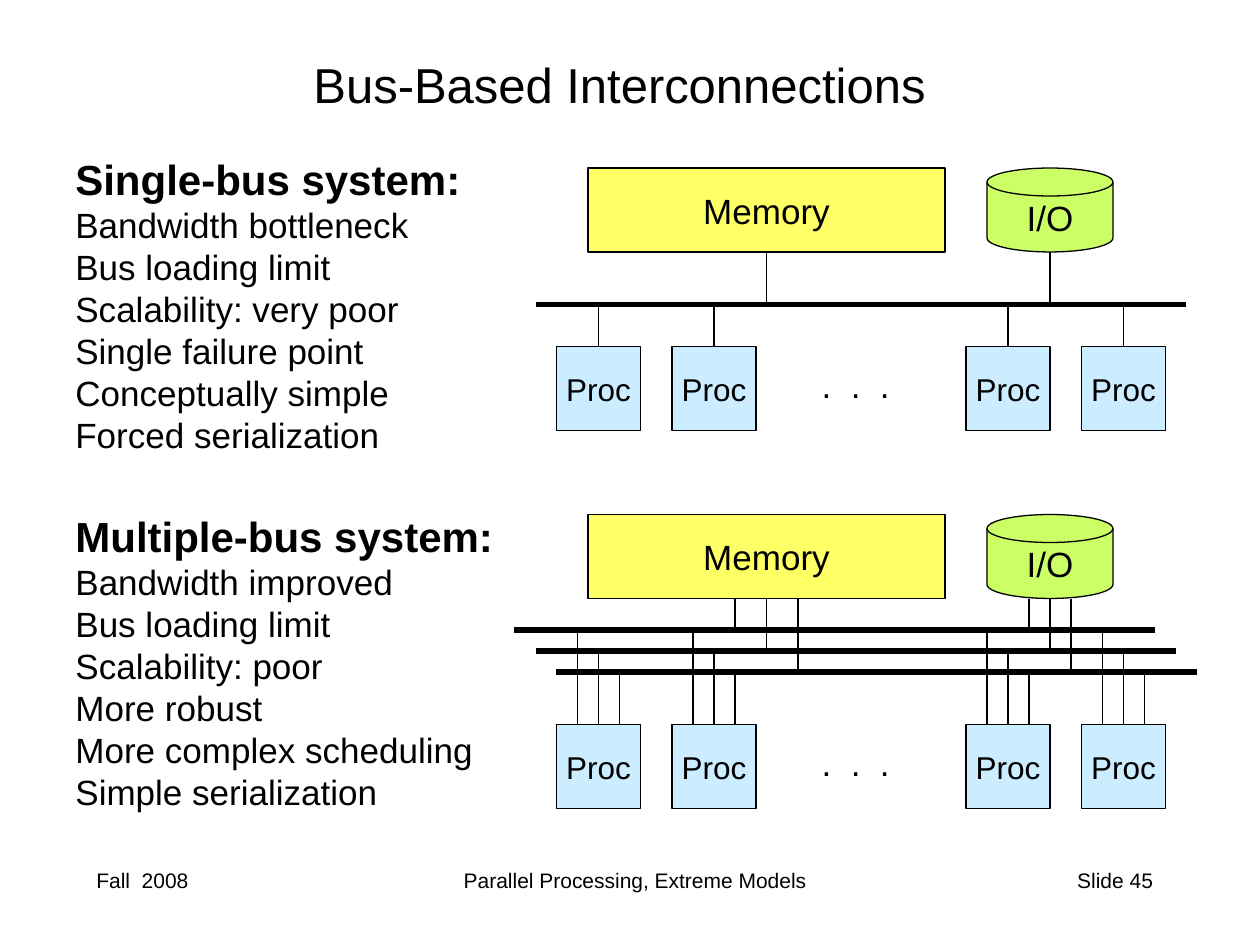
from dataclasses import dataclass

from lxml import etree
from pptx import Presentation
from pptx.dml.color import RGBColor
from pptx.enum import shapes, text
from pptx.oxml.ns import qn
from pptx.util import Pt

LEFT, MID, RIGHT = (text.PP_ALIGN.LEFT, text.PP_ALIGN.CENTER,
                    text.PP_ALIGN.RIGHT)
TOP, BOTTOM = 0, 2


@dataclass(frozen=True)
class Theme:
    font: str = "Arial"
    ink: str = "000000"
    memory: str = "FFFF66"
    disk: str = "CCFF66"
    proc: str = "CCECFF"
    title: int = 28
    head: int = 24
    body: int = 20
    small: int = 18
    foot: int = 12
    thin: float = 0.75
    thick: float = 3


def color(code):
    return RGBColor.from_string(code)


class Page:
    def __init__(self, slide, theme):
        self.slide, self.theme = slide, theme

    def style(self, para, size, align=LEFT, bold=False):
        para.alignment = align
        font = para.font
        font.name, font.size, font.bold = self.theme.font, Pt(size), bold
        font.color.rgb = color(self.theme.ink)

    def label(self, words, x, y, w, h, size, align=LEFT, wrap=True):
        box = self.slide.shapes.add_textbox(Pt(x), Pt(y), Pt(w), Pt(h))
        frame = box.text_frame
        frame.word_wrap = wrap
        frame.text = words
        for para in frame.paragraphs:
            self.style(para, size, align)
        return frame

    def notes(self, head, lines, y, w):
        """Add a bold heading with plain lines under it."""
        frame = self.label("\n".join([head, *lines]), 36, y, w, 180,
                           self.theme.body, wrap=False)
        self.style(frame.paragraphs[0], self.theme.head, bold=True)

    def block(self, kind, words, x, y, w, h, fill, size):
        item = self.slide.shapes.add_shape(kind, Pt(x), Pt(y), Pt(w), Pt(h))
        item.shadow.inherit = False
        item.fill.solid()
        item.fill.fore_color.rgb = color(fill)
        item.line.color.rgb = color(self.theme.ink)
        item.line.width = Pt(self.theme.thin)
        frame = item.text_frame
        frame.word_wrap = False
        frame.vertical_anchor = text.MSO_ANCHOR.MIDDLE
        frame.text = words
        self.style(frame.paragraphs[0], size, MID)
        return item

    def line(self, x1, y1, x2, y2, width):
        item = self.slide.shapes.add_connector(
            shapes.MSO_CONNECTOR.STRAIGHT, Pt(x1), Pt(y1), Pt(x2), Pt(y2))
        item.line.color.rgb = color(self.theme.ink)
        item.line.width = Pt(width)
        etree.SubElement(item._element.spPr, qn("a:effectLst"))
        return item

    def taps(self, item, side, buses, gap):
        """Drop one line from a block to each bus, spread about its middle."""
        mid = (item.left + item.width / 2) / Pt(1)
        y = (item.top + (item.height if side == BOTTOM else 0)) / Pt(1)
        for i, bus in enumerate(buses):
            shift = (i - (len(buses) - 1) / 2) * gap
            tap = self.line(mid + shift, y, mid + shift, bus,
                            self.theme.thin)
            if not shift and item.auto_shape_type == shapes.MSO_SHAPE.RECTANGLE:
                tap.begin_connect(item, side)

    def system(self, top, row, buses, start, length):
        """Draw memory and disk above the buses, processors below."""
        look, kinds = self.theme, shapes.MSO_SHAPE
        memory = self.block(kinds.RECTANGLE, "Memory", 336, top, 204, 48,
                            look.memory, look.body)
        disk = self.block(kinds.FLOWCHART_MAGNETIC_DISK, "I/O", 564, top,
                          72, 48, look.disk, look.body)
        self.taps(memory, BOTTOM, buses, 18)
        self.taps(disk, BOTTOM, buses, 12)
        for x in (318, 384, 552, 618):
            proc = self.block(kinds.RECTANGLE, "Proc", x, row, 48, 48,
                              look.proc, look.small)
            self.taps(proc, TOP, buses, 12)
        for i, bus in enumerate(buses):
            x = start + 12 * i
            self.line(x, bus, x + length, bus, look.thick)
        self.label(".  .  .", 459, row + 6, 60, 31, look.body, MID)


def main():
    deck = Presentation()
    deck.slide_width, deck.slide_height = Pt(720), Pt(540)
    look = Theme()
    page = Page(deck.slides.add_slide(deck.slide_layouts[6]), look)

    for words, x, w, align in (
            ("Fall  2008", 48, 150, LEFT),
            ("Parallel Processing, Extreme Models", 174, 378, MID),
            ("Slide 45", 516, 150, RIGHT)):
        page.label(words, x, 492, w, 36, look.foot, align)
    title = page.label("Bus-Based Interconnections", 48, 18, 612, 60,
                       look.title, MID)
    title.vertical_anchor = text.MSO_ANCHOR.MIDDLE

    page.system(96, 198, [174], 306, 372)
    page.system(294, 414, [360, 372, 384], 294, 366)

    page.notes("Single-bus system:", [
        "Bandwidth bottleneck", "Bus loading limit",
        "Scalability: very poor", "Single failure point",
        "Conceptually simple", "Forced serialization"], 84, 235)
    page.notes("Multiple-bus system:", [
        "Bandwidth improved", "Bus loading limit", "Scalability: poor",
        "More robust", "More complex scheduling",
        "Simple serialization"], 288, 253)
    deck.save("out.pptx")


if __name__ == "__main__":
    main()
